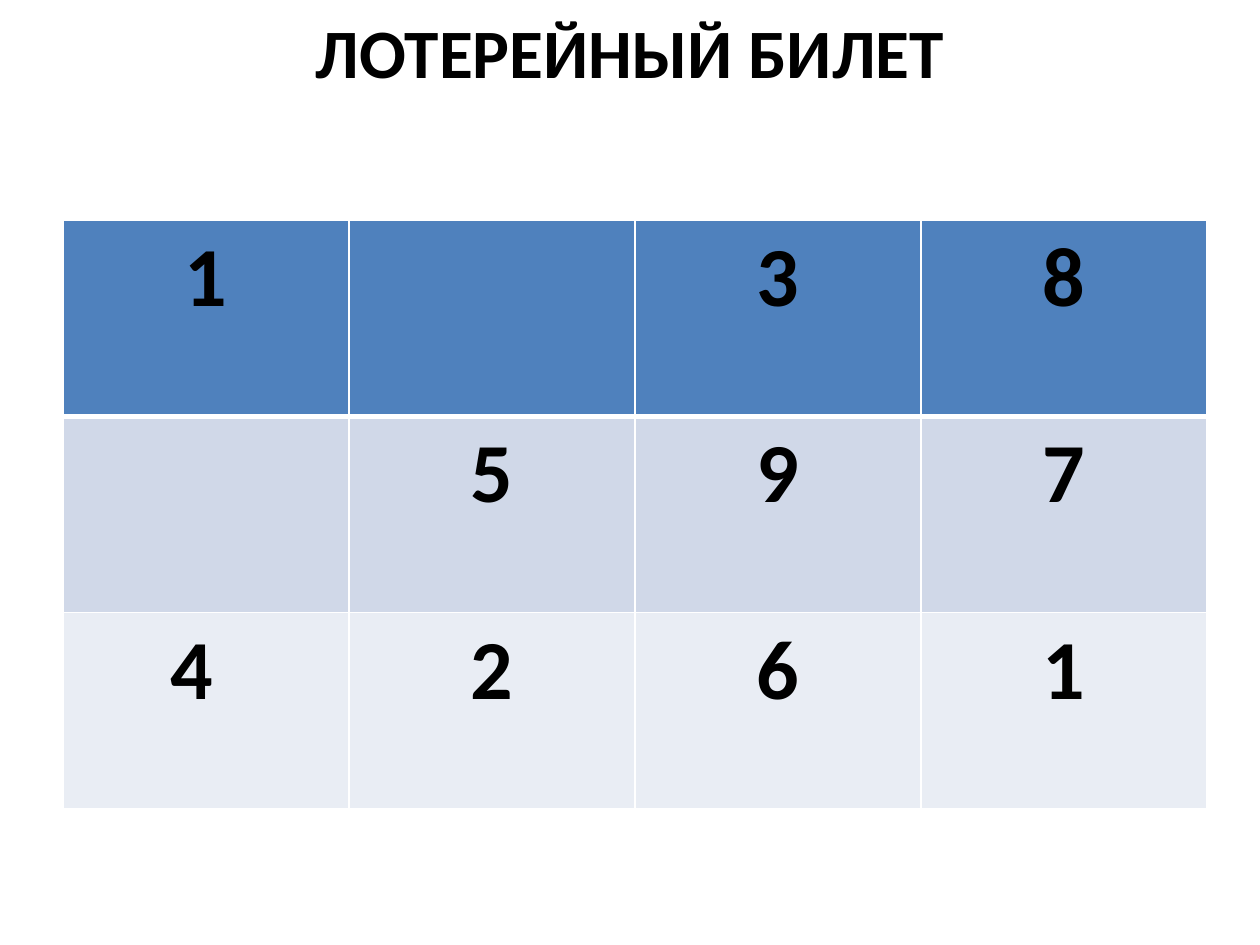
from lxml import etree
from pptx import Presentation
from pptx.dml.color import RGBColor
from pptx.enum.text import MSO_ANCHOR, PP_ALIGN
from pptx.oxml.ns import qn
from pptx.util import Inches, Pt

CENTER, LEFT = PP_ALIGN.CENTER, PP_ALIGN.LEFT
MIDDLE = MSO_ANCHOR.MIDDLE

BLACK = RGBColor(0x00, 0x00, 0x00)
WHITE = RGBColor(0xFF, 0xFF, 0xFF)
ROW_FILLS = [
    RGBColor(0x4F, 0x81, 0xBD),
    RGBColor(0xD0, 0xD8, 0xE8),
    RGBColor(0xE9, 0xED, 0xF4),
]
FONT = "Calibri"
TITLE_ONLY = 5

TICKET = [
    ["1", "", "3", "8"],
    ["", "5", "9", "7"],
    ["4", "2", "6", "1"],
]


def format_text(p, size, align=CENTER):
    p.alignment = align
    for font in [p.font] + [r.font for r in p.runs]:
        font.name = FONT
        font.size = Pt(size)
        font.bold = True
        font.color.rgb = BLACK


def set_borders(cell, widths):
    """Draw white borders; widths maps each side (L, R, T, B) to points."""
    tcPr = cell._tc.get_or_add_tcPr()
    for i, (side, width) in enumerate(widths.items()):
        ln = etree.Element(qn(f"a:ln{side}"), w=str(Pt(width)))
        fill = etree.SubElement(ln, qn("a:solidFill"))
        etree.SubElement(fill, qn("a:srgbClr"), val=str(WHITE))
        tcPr.insert(i, ln)  # borders come before the cell fill


def add_title(slide, text, left, top, width, height):
    title = slide.shapes.title
    title.left, title.top, title.width, title.height = left, top, width, height
    tf = title.text_frame
    tf.text = text
    tf.word_wrap = True
    tf.vertical_anchor = MIDDLE
    format_text(tf.paragraphs[0], 39.6)


def add_ticket(slide, rows, left, top, width, height):
    n_rows, n_cols = len(rows), len(rows[0])
    table = slide.shapes.add_table(n_rows, n_cols, left, top, width, height).table
    for column in table.columns:
        column.width = width // n_cols
    for i, values in enumerate(rows):
        table.rows[i].height = height // n_rows
        for j, value in enumerate(values):
            cell = table.cell(i, j)
            cell.text = value
            cell.fill.solid()
            cell.fill.fore_color.rgb = ROW_FILLS[i]
            format_text(cell.text_frame.paragraphs[0], 48)
            # A thicker rule separates the first row from the others
            set_borders(cell, {"L": 1, "R": 1,
                               "T": 3 if i == 1 else 1,
                               "B": 3 if i == 0 else 1})

    # The first number of the last row is indented from the left
    cell = table.cell(n_rows - 1, 0)
    cell.margin_left = Inches(0.85)
    cell.text_frame.paragraphs[0].alignment = LEFT


def main():
    prs = Presentation()
    prs.slide_width, prs.slide_height = Inches(10), Inches(7.5)
    slide = prs.slides.add_slide(prs.slide_layouts[TITLE_ONLY])
    add_title(slide, "ЛОТЕРЕЙНЫЙ БИЛЕТ",
              Inches(0.5), Inches(0.05), Inches(9), Inches(0.7))
    add_ticket(slide, TICKET,
               Inches(0.5), Inches(1.75), Inches(9.08), Inches(4.67))
    prs.save("out.pptx")


if __name__ == "__main__":
    main()
